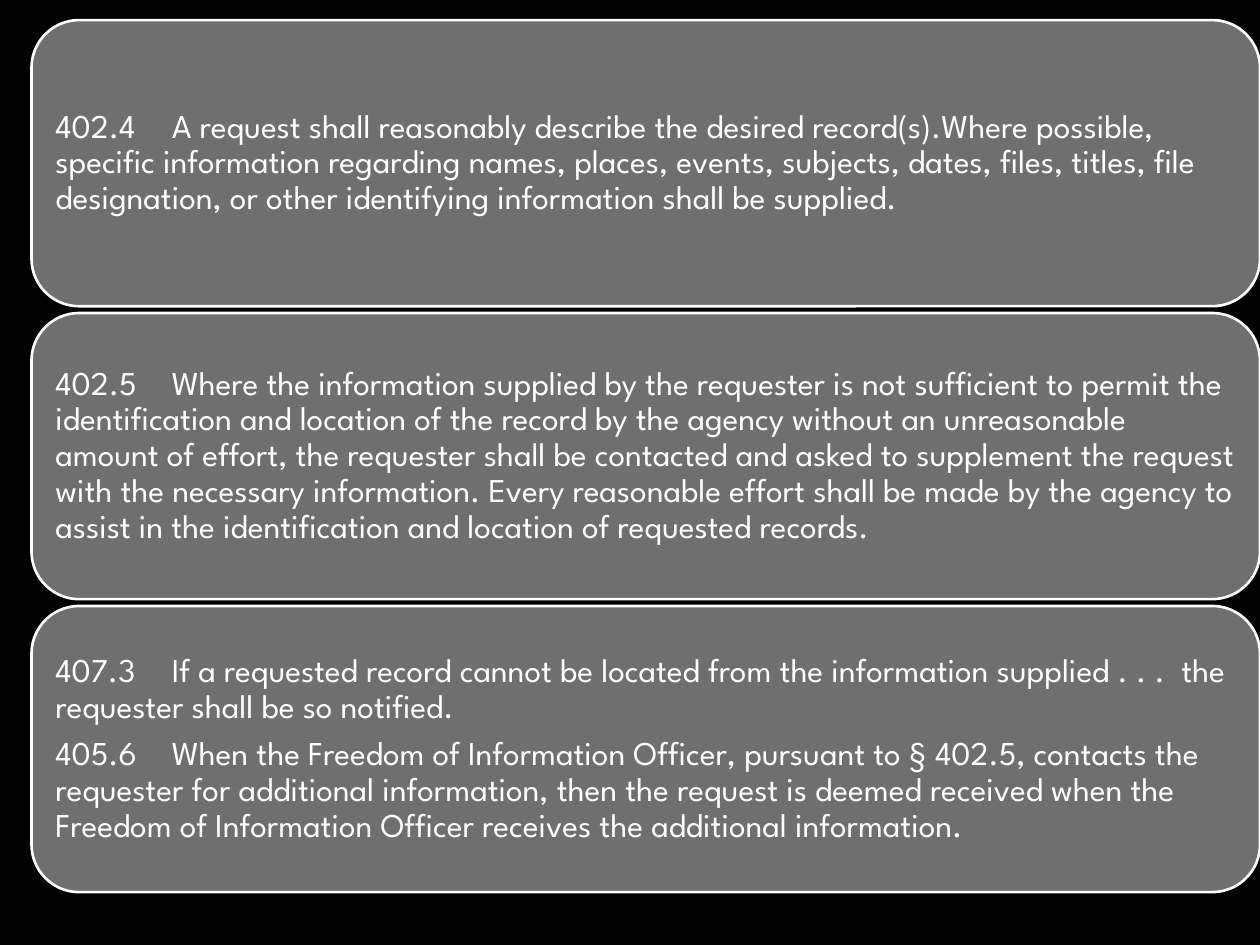
from pptx import Presentation
from pptx.dml.color import RGBColor
from pptx.enum.shapes import MSO_SHAPE
from pptx.enum.text import MSO_ANCHOR, PP_ALIGN
from pptx.util import Pt

RULES = [
    [("402.4", "A request shall reasonably describe the desired record(s).Where possible, "
      "specific information regarding names, places, events, subjects, dates, files, "
      "titles, file designation, or other identifying information shall be supplied.")],
    [("402.5", "Where the information supplied by the requester is not sufficient to permit "
      "the identification and location of the record by the agency without an unreasonable "
      "amount of effort, the requester shall be contacted and asked to supplement the "
      "request with the necessary information. Every reasonable effort shall be made by the "
      "agency to assist in the identification and location of requested records.")],
    [("407.3", "If a requested record cannot be located from the information supplied . . .  "
      "the requester shall be so notified."),
     ("405.6", "When the Freedom of Information Officer, pursuant to § 402.5, contacts the "
      "requester for additional information, then the request is deemed received when the "
      "Freedom of Information Officer receives the additional information.")],
]
LEFT, TOP, WIDTH, HEIGHT, GAP = 18, 11.5, 702, 163.5, 3.9
INSET, TAB = 5.7, 66.5


def color(code):
    return RGBColor.from_string(code)


def write(para, text, size=19, font="League Spartan", ink="FFFFFF"):
    para.alignment = PP_ALIGN.LEFT
    para.line_spacing = 0.9
    para.space_after = Pt(size * 0.35)
    para._p.get_or_add_pPr().set("defTabSz", str(Pt(TAB)))
    run = para.add_run()
    run.text = text
    run.font.size = Pt(size)
    run.font.name = font
    run.font.color.rgb = color(ink)


def add_card(slide, top, rules):
    card = slide.shapes.add_shape(MSO_SHAPE.ROUNDED_RECTANGLE,
                                  Pt(LEFT), Pt(top), Pt(WIDTH), Pt(HEIGHT))
    card.shadow.inherit = False
    card.fill.solid()
    card.fill.fore_color.rgb = color("6F6F6F")
    card.line.color.rgb = color("FFFFFF")
    card.line.width = Pt(1.5)
    frame = card.text_frame
    frame.word_wrap = True
    frame.vertical_anchor = MSO_ANCHOR.MIDDLE
    frame.margin_left = frame.margin_right = Pt(INSET)
    frame.margin_top = frame.margin_bottom = Pt(INSET)
    for i, rule in enumerate(rules):
        para = frame.add_paragraph() if i else frame.paragraphs[0]
        write(para, "\t".join(rule))


def main():
    deck = Presentation()
    deck.slide_width, deck.slide_height = Pt(720), Pt(540)
    slide = deck.slides.add_slide(deck.slide_layouts[6])
    slide.background.fill.solid()
    slide.background.fill.fore_color.rgb = color("000000")
    for row, rules in enumerate(RULES):
        add_card(slide, TOP + row * (HEIGHT + GAP), rules)
    deck.save("out.pptx")


if __name__ == "__main__":
    main()
